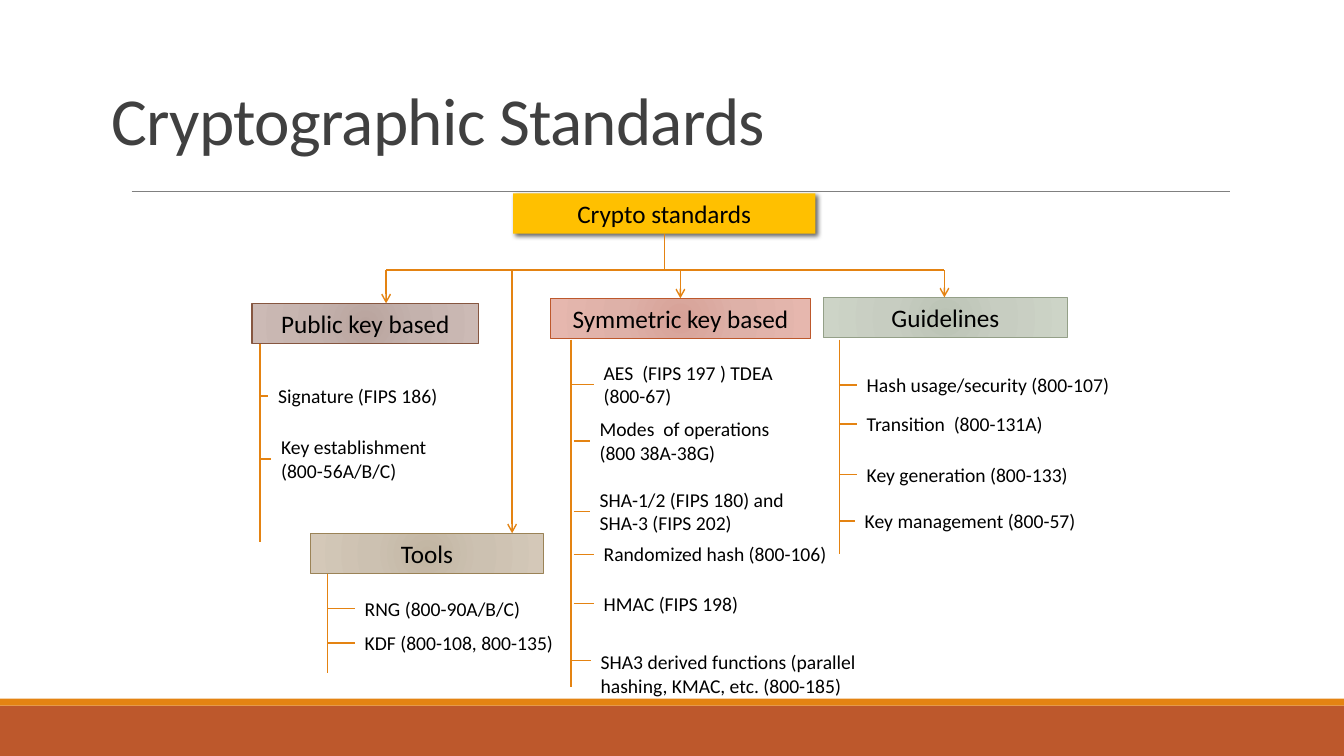
from lxml import etree
from pptx import Presentation
from pptx.dml.color import RGBColor
from pptx.enum.shapes import MSO_CONNECTOR, MSO_SHAPE
from pptx.enum.text import MSO_ANCHOR, MSO_AUTO_SIZE, PP_ALIGN
from pptx.oxml import parse_xml
from pptx.oxml.ns import nsdecls, qn
from pptx.util import Pt

LINE, RECT = MSO_CONNECTOR.STRAIGHT, MSO_SHAPE.RECTANGLE
LEFT, MID = PP_ALIGN.LEFT, PP_ALIGN.CENTER
TOP, BOTTOM = MSO_ANCHOR.TOP, MSO_ANCHOR.BOTTOM
GROW, FIXED = MSO_AUTO_SIZE.SHAPE_TO_FIT_TEXT, MSO_AUTO_SIZE.NONE

# Content: lengths in points
TITLE = "Cryptographic Standards"
ROOT = {"name": "Crypto standards", "box": (366.5, 138.2, 216)}

# box: left, top, width; arrow: x of the arrow; trunk: x, top, bottom
# items: text, left, top, width, lines, gap between trunk and tick
GROUPS = [
    {"name": "Public key based", "tone": "rose", "box": (180, 216.7, 162),
     "arrow": 275.8, "trunk": (185.8, 245.5, 387.4),
     "items": [
         ("Signature (FIPS 186)", 191.5, 270.7, 138.2, 1, 0),
         ("Key establishment (800-56A/B/C)", 193.7, 307.4, 138.2, 2, 0)]},
    {"name": "Tools", "tone": "sand", "box": (221.8, 380.9, 166.3),
     "arrow": 365.8, "trunk": (234, 409.7, 481),
     "items": [
         ("RNG (800-90A/B/C)", 253.4, 422.6, 135.4, 1, 0),
         ("KDF (800-108, 800-135)", 253.4, 447.1, 154.8, 1, 0)]},
    {"name": "Symmetric key based", "tone": "red", "box": (393.1, 213.1, 185.8),
     "arrow": 486, "trunk": (407.9, 242.6, 491),
     "items": [
         ("AES  (FIPS 197 ) TDEA (800-67)", 424.1, 254.2, 135.4, 2, 0),
         ("Modes  of operations (800 38A-38G)", 421.2, 294.5, 138.2, 2, 1.8),
         ("SHA-1/2 (FIPS 180) and SHA-3 (FIPS 202)", 421.2, 344.9, 161.3, 2, 1.8),
         ("Randomized hash (800-106)", 424.1, 383.8, 176.4, 1, 1.8),
         ("HMAC (FIPS 198)", 424.1, 419, 135.4, 1, 1.8),
         ("SHA3 derived functions (parallel hashing, KMAC, etc. (800-185)",
          421.9, 460.8, 200.2, 2, 0)]},
    {"name": "Guidelines", "tone": "sage", "box": (588.2, 212.4, 174.2),
     "arrow": 674.6, "trunk": (599.8, 242.6, 396),
     "items": [
         ("Hash usage/security (800-107)", 612, 262.8, 195.1, 1, 0),
         ("Transition  (800-131A)", 612, 290.9, 144, 1, 0),
         ("Key generation (800-133)", 612, 326.9, 165.6, 1, 0),
         ("Key management (800-57)", 610.6, 360, 165.6, 1, 0)]},
]
LAST = "SHA3"  # its tick meets the first line of text

THEME = {
    "font": "Calibri", "title": 48, "head": 18, "body": 14,
    "ink": "000000", "dark": "404040", "gold": "FFC000",
    "orange": "E48312", "rust": "BD582C", "rule": "808080",
    # edge, then the three gradient stops
    "rose": ("865640", "B9A49E", "C4B2AD", "CCBAB5"),
    "sand": ("9B8357", "C2B5A2", "CCC1B1", "D4C8B8"),
    "red": ("BD582C", "D7A197", "DEB1A8", "E6B7AE"),
    "sage": ("94A088", "BBC3B5", "C7CDC1", "CDD4C7"),
}
STOPS = (0, 45, 100)
WIDE, HIGH = 960, 540
BOX_H, BUS_Y = 28.8, 193
ITEM_H = {1: 24.2, 2: 41}

deck = Presentation()
deck.slide_width, deck.slide_height = Pt(WIDE), Pt(HIGH)
slide = deck.slides.add_slide(deck.slide_layouts[5])


def rgb(key):
    return RGBColor.from_string(THEME.get(key, key))


def assign(target, values):
    for name, value in values.items():
        setattr(target, name, value)


def write(shape, text, size, color="ink", align=LEFT, anchor=TOP, fit=GROW):
    frame = shape.text_frame
    frame.text = text
    assign(frame, {"word_wrap": True, "auto_size": fit, "vertical_anchor": anchor})
    para = frame.paragraphs[0]
    para.alignment = align
    font = para.runs[0].font
    assign(font, {"name": THEME["font"], "size": Pt(THEME[size]), "bold": False})
    font.color.rgb = rgb(color)
    return para


def line(x1, y1, x2, y2, color="orange", width=1, arrow=False):
    link = slide.shapes.add_connector(LINE, Pt(x1), Pt(y1), Pt(x2), Pt(y2))
    link.line.width = Pt(width)
    link.line.color.rgb = rgb(color)
    if arrow:
        etree.SubElement(link.line._get_or_add_ln(), qn("a:tailEnd"), type="arrow")
    etree.SubElement(link._element.spPr, qn("a:effectLst"))


def block(left, top, width, height, color):
    shape = slide.shapes.add_shape(RECT, Pt(left), Pt(top), Pt(width), Pt(height))
    shape.shadow.inherit = False
    shape.fill.solid()
    shape.fill.fore_color.rgb = rgb(color)
    shape.line.fill.background()
    return shape


def shade(shape, tone):
    edge, *colors = THEME[tone]
    stops = "".join(
        f'<a:gs pos="{pos * 1000}"><a:srgbClr val="{color}"/></a:gs>'
        for pos, color in zip(STOPS, colors))
    grad = parse_xml(
        f'<a:gradFill {nsdecls("a")} rotWithShape="1"><a:gsLst>{stops}</a:gsLst>'
        '<a:path path="circle"><a:fillToRect l="100000" t="100000" '
        'r="100000" b="100000"/></a:path></a:gradFill>')
    props = shape._element.spPr
    props.replace(props.find(qn("a:solidFill")), grad)
    shape.line.color.rgb = rgb(edge)
    shape.line.width = Pt(1)


# Footer bands and title rule
block(0, 504, WIDE, 36, "rust")
block(0, 499, WIDE, 5, "orange")
line(94, 136.6, 878.4, 136.6, "rule", 0.5)

# Title
title = slide.shapes.title
assign(title, {"left": Pt(31), "top": Pt(57.6), "width": Pt(888), "height": Pt(59.8)})
head = write(title, TITLE, "title", "dark", LEFT, BOTTOM, FIXED)
head.line_spacing = 0.85
title.text_frame.margin_left = Pt(48.6)
head.runs[0].font._element.set("spc", "-50")

# Root box with its shadow
left, top, width = ROOT["box"]
root = block(left, top, width, BOX_H, "gold")
write(root, ROOT["name"], "head", align=MID)
root._element.spPr.find(qn("a:effectLst")).append(parse_xml(
    f'<a:outerShdw {nsdecls("a")} blurRad="{Pt(3.5)}" dist="{Pt(2)}" dir="2700000">'
    '<a:srgbClr val="000000"><a:alpha val="60000"/></a:srgbClr></a:outerShdw>'))

# Bus from the root to the groups
stem = left + width / 2
line(stem, top + BOX_H, stem, BUS_Y)
ends = [group["arrow"] for group in GROUPS]
line(min(ends), BUS_Y, max(ends), BUS_Y)

# Groups: box, arrow, trunk, and items with ticks
for group in GROUPS:
    left, top, width = group["box"]
    box = block(left, top, width, BOX_H, "gold")
    shade(box, group["tone"])
    write(box, group["name"], "head", align=MID)
    line(group["arrow"], BUS_Y, group["arrow"], top, arrow=True)
    trunk, start, end = group["trunk"]
    line(trunk, start, trunk, end)
    for text, x, y, wide, rows, gap in group["items"]:
        high = ITEM_H[rows]
        label = slide.shapes.add_textbox(Pt(x), Pt(y), Pt(wide), Pt(high))
        write(label, text, "body")
        mid = y + (ITEM_H[1] - 2 if text.startswith(LAST) else high) / 2
        line(trunk + gap, mid, x, mid)

deck.save("out.pptx")
